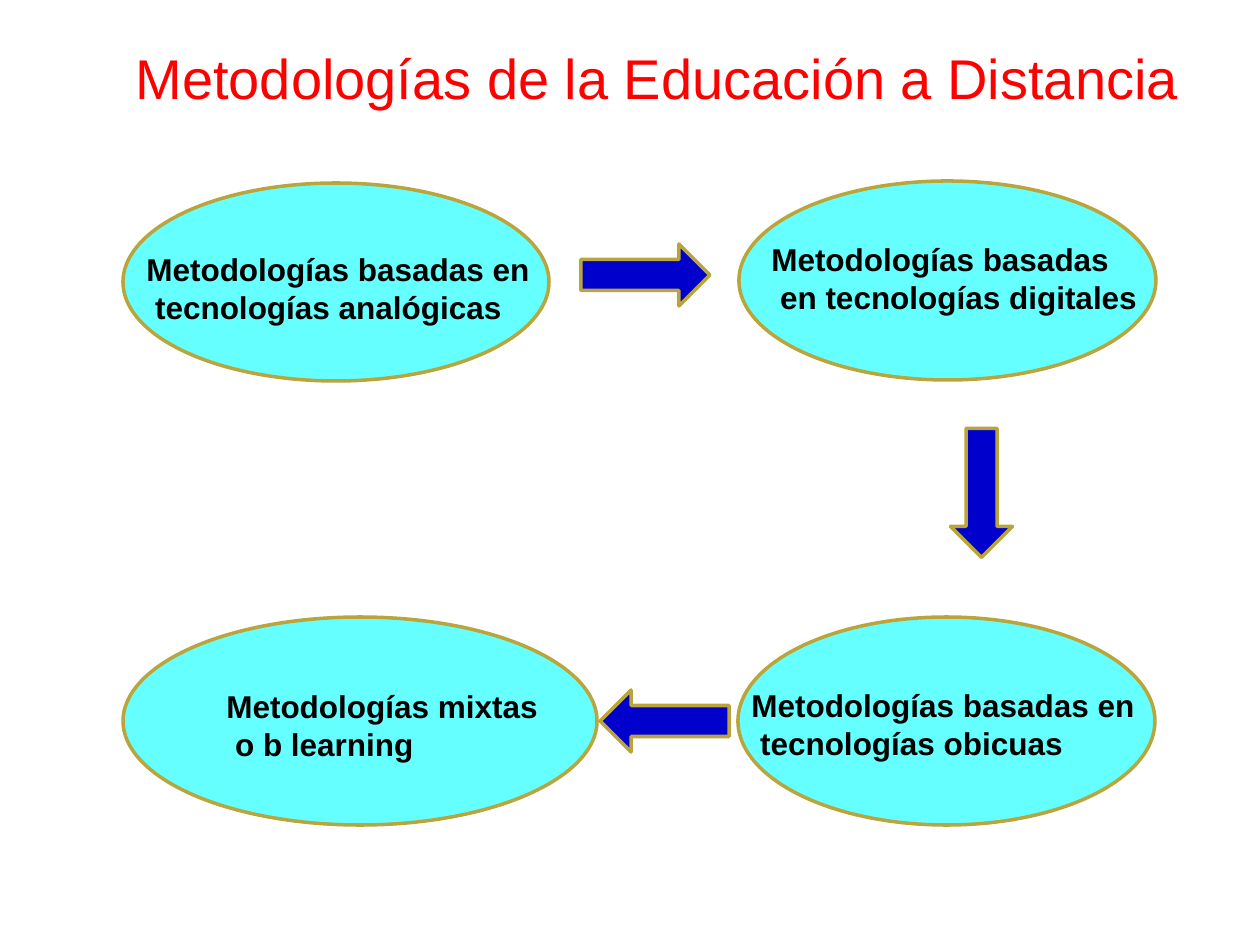
import pptx
import pptx.util
import pptx.dml.color
import pptx.enum.shapes
import pptx.enum.text

PX = 914400 / 126
THEME = {
    "oval": "66FFFF", "arrow": "0000CC", "outline": "BAA53D", "outline_width": 2,
    "title": {"name": "Arial", "size": pptx.util.Pt(32), "bold": False},
    "title_color": "FF0000",
    "label": {"name": "Arial", "size": pptx.util.Pt(18), "bold": True},
    "label_color": "000000",
}
SHAPES = pptx.enum.shapes.MSO_SHAPE

deck = pptx.Presentation()
deck.slide_width = round(1260 * PX)
deck.slide_height = round(945 * PX)
page = deck.slides.add_slide(deck.slide_layouts[6])


def add_outlined(kind, frame, fill):
    shape = page.shapes.add_shape(kind, *[round(n * PX) for n in frame])
    shape.shadow.inherit = False
    shape.fill.solid()
    shape.fill.fore_color.rgb = pptx.dml.color.RGBColor.from_string(fill)
    shape.line.color.rgb = pptx.dml.color.RGBColor.from_string(THEME["outline"])
    shape.line.width = pptx.util.Pt(THEME["outline_width"])
    return shape


def add_text(frame, lines, style, wrap=False):
    box = page.shapes.add_textbox(*[round(n * PX) for n in frame])
    box.text_frame.word_wrap = wrap
    box.text_frame.auto_size = pptx.enum.text.MSO_AUTO_SIZE.SHAPE_TO_FIT_TEXT
    for index, line in enumerate(lines):
        para = box.text_frame.paragraphs[0] if index == 0 else box.text_frame.add_paragraph()
        span = para.add_run()
        span.text = line
        for name, value in THEME[style].items():
            setattr(span.font, name, value)
        span.font.color.rgb = pptx.dml.color.RGBColor.from_string(THEME[style + "_color"])


# Title
add_text((123, 37, 1077, 81), ["Metodologías de la Educación a Distancia"], "title")

# Stages: oval frame, label frame, lines, wrapping
stages = [
    ((123, 183, 426, 198), (134, 244, 412, 89),
     ["Metodologías basadas en", " tecnologías analógicas"], False),
    ((739, 181, 417, 199), (759, 234, 392, 89),
     ["Metodologías basadas", " en tecnologías digitales"], True),
    ((738, 617, 417, 208), (739, 680, 412, 89),
     ["Metodologías basadas en", " tecnologías obicuas"], False),
    ((123, 617, 474, 208), (214, 681, 340, 89),
     ["Metodologías mixtas", " o b learning"], False),
]
for oval_frame, label_frame, lines, wrap in stages:
    add_outlined(SHAPES.OVAL, oval_frame, THEME["oval"])
    add_text(label_frame, lines, "label", wrap)

# Arrows from stage to stage
for left, top, rotation in [(581, 244, 0), (917, 462, 90), (600, 690, 180)]:
    arrow = add_outlined(SHAPES.RIGHT_ARROW, (left, top, 129, 62), THEME["arrow"])
    arrow.rotation = rotation

deck.save("out.pptx")
